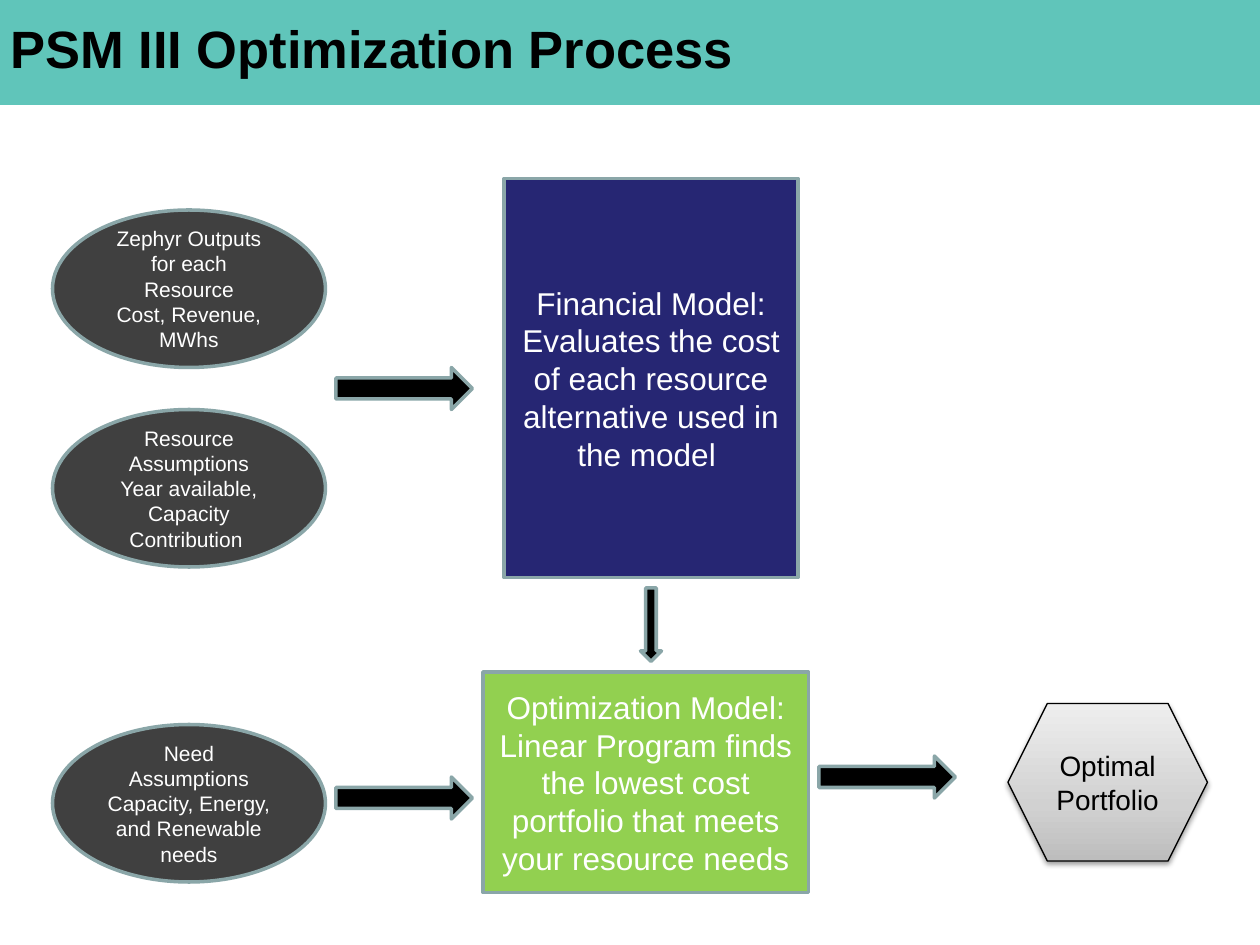
from copy import deepcopy

from lxml import etree
from pptx import Presentation
from pptx.dml.color import RGBColor
from pptx.enum.shapes import MSO_SHAPE as Shape
from pptx.enum.text import MSO_ANCHOR as Anchor, PP_ALIGN as Align
from pptx.oxml.ns import qn
from pptx.util import Pt

EMU_PER_PX = 7620  # 120 px to the inch
FONT = "Arial"
COLORS = {
    "banner": "60C5BA", "input": "404040", "financial": "262673",
    "optimization": "92D050", "outline": "8AA6A8", "black": "000000", "white": "FFFFFF",
    "metal_dark": "BDBDBD", "metal_mid": "D1D1D1", "metal_light": "EEEEEE",
}


def px(length):
    return length * EMU_PER_PX


def rgb(name):
    return RGBColor.from_string(COLORS[name])


def add_node(slide, kind, box, fill, outline="outline", outline_pt=2):
    node = slide.shapes.add_shape(kind, *map(px, box))
    node.shadow.inherit = False
    node.fill.solid()
    node.fill.fore_color.rgb = rgb(fill)
    if outline:
        node.line.color.rgb = rgb(outline)
        node.line.width = Pt(outline_pt)
    else:
        node.line.fill.background()
    return node


def write(frame, lines, size, color="white", align=Align.CENTER, bold=False):
    """Fill a text frame with one paragraph per line."""
    frame.word_wrap = True
    frame.vertical_anchor = Anchor.MIDDLE
    for index, line in enumerate(lines):
        paragraph = frame.paragraphs[0] if index == 0 else frame.add_paragraph()
        paragraph.alignment = align
        run = paragraph.add_run()
        run.text = line
        run.font.name = FONT
        run.font.size = Pt(size)
        run.font.bold = bold
        run.font.color.rgb = rgb(color)


def add_banner(slide, box, heading):
    left, top, width, height = box
    add_node(slide, Shape.RECTANGLE, box, "banner", outline=None)
    title = slide.shapes.add_textbox(px(left), px(top), px(width - 20), px(height - 10))
    frame = title.text_frame
    frame.margin_left = frame.margin_right = px(10)
    frame.margin_top = frame.margin_bottom = px(5)
    write(frame, [heading], 30, "black", Align.LEFT, bold=True)


def add_inputs(slide, box, inputs):
    """Stack input ellipses; each input is its offset in the box and its lines."""
    left, top, width, height = box
    for offset, lines in inputs:
        ellipse = add_node(slide, Shape.OVAL, (left, top + offset, width, height), "input")
        write(ellipse.text_frame, lines, 12)


def add_model(slide, box, fill, lines):
    model = add_node(slide, Shape.RECTANGLE, box, fill)
    write(model.text_frame, lines, 18)


def add_flow_arrows(slide, box):
    """Place the arrows relative to the area between inputs and result."""
    left, top, _, _ = box
    for x, y in ((0, 0), (0, 390), (460, 370)):
        add_node(slide, Shape.RIGHT_ARROW, (left + x, top + y, 130, 40), "black")
    add_node(slide, Shape.DOWN_ARROW, (left + 290, top + 210, 20, 70), "black")


def add_result(slide, box, label):
    """Hexagon with a metallic gradient and a soft shadow below."""
    result = add_node(slide, Shape.HEXAGON, box, "metal_dark", "black", 0.75)
    result.fill.gradient()
    result.fill.gradient_angle = 90
    properties = result.element.spPr
    stop_list = properties.find(".//" + qn("a:gsLst"))
    stop_list.insert(1, deepcopy(stop_list[0]))
    metal = ((0, "metal_dark"), (0.35, "metal_mid"), (1, "metal_light"))
    for stop, (position, color) in zip(result.fill.gradient_stops, metal):
        stop.position = position
        stop.color.rgb = rgb(color)

    effects = properties.find(qn("a:effectLst"))
    shadow = etree.SubElement(effects, qn("a:outerShdw"), blurRad="40000", dist="20000",
                              dir="5400000", rotWithShape="0")
    shade = etree.SubElement(shadow, qn("a:srgbClr"), val=COLORS["black"])
    etree.SubElement(shade, qn("a:alpha"), val="38000")
    write(result.text_frame, [label], 16, "black")


def main():
    deck = Presentation()
    deck.slide_width, deck.slide_height = px(1200), px(900)
    slide = deck.slides.add_slide(deck.slide_layouts[6])

    add_banner(slide, (0, 0, 1200, 100), "PSM III Optimization Process")
    add_inputs(slide, (50, 200, 260, 150), (
        (0, ["Zephyr Outputs for each Resource", "Cost, Revenue, MWhs"]),
        (190, ["Resource Assumptions", "Year available, Capacity Contribution "]),
        (490, ["Need Assumptions", "Capacity, Energy, and Renewable needs"]),
    ))
    add_model(slide, (480, 170, 280, 380), "financial", [
        "Financial Model:",
        "Evaluates the cost of each resource alternative used in the model ",
    ])
    add_model(slide, (460, 640, 310, 210), "optimization", [
        "Optimization Model:",
        "Linear Program finds the lowest cost portfolio that meets your resource needs",
    ])
    add_flow_arrows(slide, (320, 350, 590, 430))
    add_result(slide, (960, 670, 190, 150), "Optimal Portfolio")
    deck.save("out.pptx")


if __name__ == "__main__":
    main()
